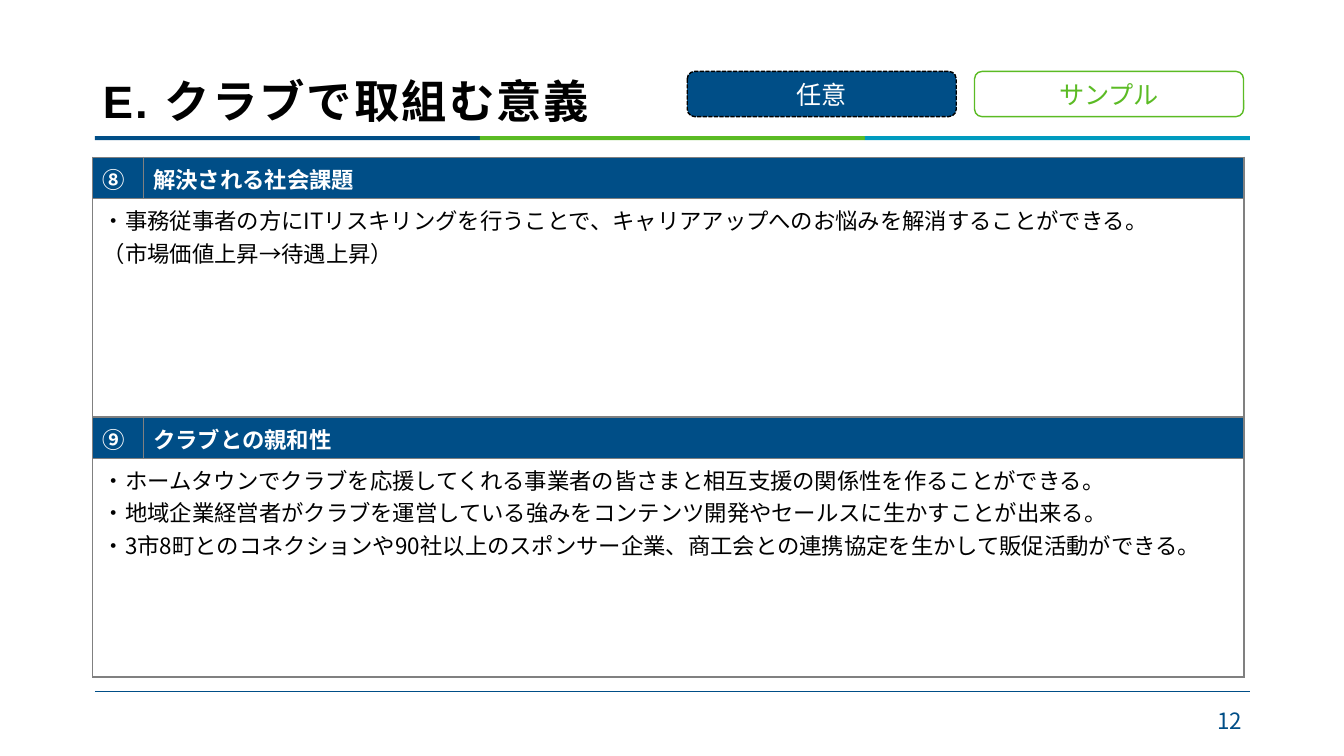
"""Build the slide on why the club takes on this work."""
from lxml.etree import SubElement
from pptx import Presentation
from pptx.dml.color import RGBColor
from pptx.enum.dml import MSO_LINE
from pptx.enum.shapes import MSO_CONNECTOR, MSO_SHAPE
from pptx.enum.text import MSO_ANCHOR, MSO_AUTO_SIZE, PP_ALIGN
from pptx.oxml import parse_xml
from pptx.oxml.ns import nsdecls, qn
from pptx.util import Cm, Pt

TITLE = "E. クラブで取組む意義"
PAGE_NUMBER = "12"
SECTIONS = [
    ("⑧", "解決される社会課題", [
        "・事務従事者の方にITリスキリングを行うことで、キャリアアップへのお悩みを解消することができる。",
        "（市場価値上昇→待遇上昇）",
    ]),
    ("⑨", "クラブとの親和性", [
        "・ホームタウンでクラブを応援してくれる事業者の皆さまと相互支援の関係性を作ることができる。",
        "・地域企業経営者がクラブを運営している強みをコンテンツ開発やセールスに生かすことが出来る。",
        "・3市8町とのコネクションや90社以上のスポンサー企業、商工会との連携協定を生かして販促活動ができる。",
    ]),
]
NAVY, GREEN, CYAN = "004E87", "5BBB24", "009BBF"
WHITE, BLACK, GREY = "FFFFFF", "000000", "808080"
BADGES = [
    ("任意", NAVY, BLACK, WHITE, MSO_LINE.SQUARE_DOT),
    ("サンプル", WHITE, GREEN, GREEN, MSO_LINE.SOLID),
]
FONT, TITLE_FONT = "Noto Sans CJK JP", "Arial"

RULE_LEFT, RULE_TOP, RULE_WIDTH, RULE_HEIGHT = 2.39, 3.43, 29.11, 0.1
FOOTER_TOP = 17.42
TABLE_LEFT, TABLE_TOP = 2.34, 3.96
COLUMNS, ROWS = (1.27, 27.74), (1.05, 5.5)
BADGE_LEFT, BADGE_TOP, BADGE_WIDTH, BADGE_HEIGHT = 17.32, 1.8, 6.78, 1.14
BADGE_STEP = 7.24


def color(value):
    return RGBColor.from_string(value)


def add_run(paragraph, text, size, text_color, bold=False, font=FONT):
    run = paragraph.add_run()
    run.text = text
    run.font.size = Pt(size)
    run.font.bold = bold
    run.font.name = font
    run.font.color.rgb = color(text_color)
    SubElement(run.font._element, qn("a:ea")).set("typeface", FONT)
    return run


def add_box(slide, kind, left, top, width, height, fill):
    shape = slide.shapes.add_shape(kind, Cm(left), Cm(top), Cm(width), Cm(height))
    shape.shadow.inherit = False
    shape.fill.solid()
    shape.fill.fore_color.rgb = color(fill)
    shape.line.fill.background()
    return shape


def add_title(slide):
    title = slide.shapes.title
    title.left, title.top, title.width, title.height = Cm(2.34), Cm(1.02), Cm(29.21), Cm(2.31)
    frame = title.text_frame
    frame.auto_size = MSO_AUTO_SIZE.NONE
    frame.vertical_anchor = MSO_ANCHOR.MIDDLE
    paragraph = frame.paragraphs[0]
    paragraph.alignment = PP_ALIGN.LEFT
    paragraph.line_spacing = 1.5
    run = add_run(paragraph, TITLE, 32.4, BLACK, True, TITLE_FONT)
    run.font._element.set("spc", "150")


def add_rules(slide):
    band_width = RULE_WIDTH / 3
    for index, fill in enumerate((NAVY, GREEN, CYAN)):
        add_box(slide, MSO_SHAPE.RECTANGLE, RULE_LEFT + index * band_width,
                RULE_TOP, band_width, RULE_HEIGHT, fill)
    line = slide.shapes.add_connector(
        MSO_CONNECTOR.STRAIGHT, Cm(RULE_LEFT), Cm(FOOTER_TOP),
        Cm(RULE_LEFT + RULE_WIDTH), Cm(FOOTER_TOP))
    line.line.color.rgb = color(NAVY)
    line.line.width = Pt(0.5)
    SubElement(line._element.spPr, qn("a:effectLst"))


def add_page_number(slide):
    box = slide.shapes.add_textbox(Cm(23.93), Cm(17.65), Cm(7.62), Cm(1.02))
    frame = box.text_frame
    frame.word_wrap = True
    frame.vertical_anchor = MSO_ANCHOR.MIDDLE
    paragraph = frame.paragraphs[0]
    paragraph.alignment = PP_ALIGN.RIGHT
    add_run(paragraph, PAGE_NUMBER, 16, NAVY)


def format_cell(cell, fill):
    if fill:
        cell.fill.solid()
        cell.fill.fore_color.rgb = color(fill)
    else:
        cell.fill.background()
    properties = cell._tc.get_or_add_tcPr()
    for index, side in enumerate(("lnL", "lnR", "lnT", "lnB")):
        properties.insert(index, parse_xml(
            f'<a:{side} {nsdecls("a")} w="12700"><a:solidFill>'
            f'<a:srgbClr val="{GREY}"/></a:solidFill></a:{side}>'))


def add_section(slide, top, number, heading, lines):
    frame = slide.shapes.add_table(2, 2, Cm(TABLE_LEFT), Cm(top),
                                   Cm(sum(COLUMNS)), Cm(sum(ROWS)))
    table = frame.table
    for column, width in zip(table.columns, COLUMNS):
        column.width = Cm(width)
    for row, height, fill in zip(table.rows, ROWS, (NAVY, None)):
        row.height = Cm(height)
        for cell in row.cells:
            format_cell(cell, fill)
    for cell, text in zip(table.rows[0].cells, (number, heading)):
        add_run(cell.text_frame.paragraphs[0], text, 16, WHITE, True)
    body = table.cell(1, 0)
    body.merge(table.cell(1, 1))
    paragraph = body.text_frame.paragraphs[0]
    for index, text in enumerate(lines):
        if index:
            paragraph.add_line_break()
        add_run(paragraph, text, 16, BLACK)


def add_badge(slide, left, text, fill, outline, text_color, dash):
    badge = add_box(slide, MSO_SHAPE.ROUNDED_RECTANGLE, left, BADGE_TOP,
                    BADGE_WIDTH, BADGE_HEIGHT, fill)
    badge.line.color.rgb = color(outline)
    badge.line.width = Pt(1)
    badge.line.dash_style = dash
    frame = badge.text_frame
    frame.vertical_anchor = MSO_ANCHOR.MIDDLE
    paragraph = frame.paragraphs[0]
    paragraph.alignment = PP_ALIGN.CENTER
    add_run(paragraph, text, 18, text_color)


def main():
    presentation = Presentation()
    presentation.slide_width, presentation.slide_height = Cm(33.87), Cm(19.05)
    slide = presentation.slides.add_slide(presentation.slide_layouts[5])
    add_rules(slide)
    add_title(slide)
    add_page_number(slide)
    for index, section in enumerate(SECTIONS):
        add_section(slide, TABLE_TOP + index * sum(ROWS), *section)
    for index, badge in enumerate(BADGES):
        add_badge(slide, BADGE_LEFT + index * BADGE_STEP, *badge)
    presentation.save("out.pptx")


if __name__ == "__main__":
    main()
